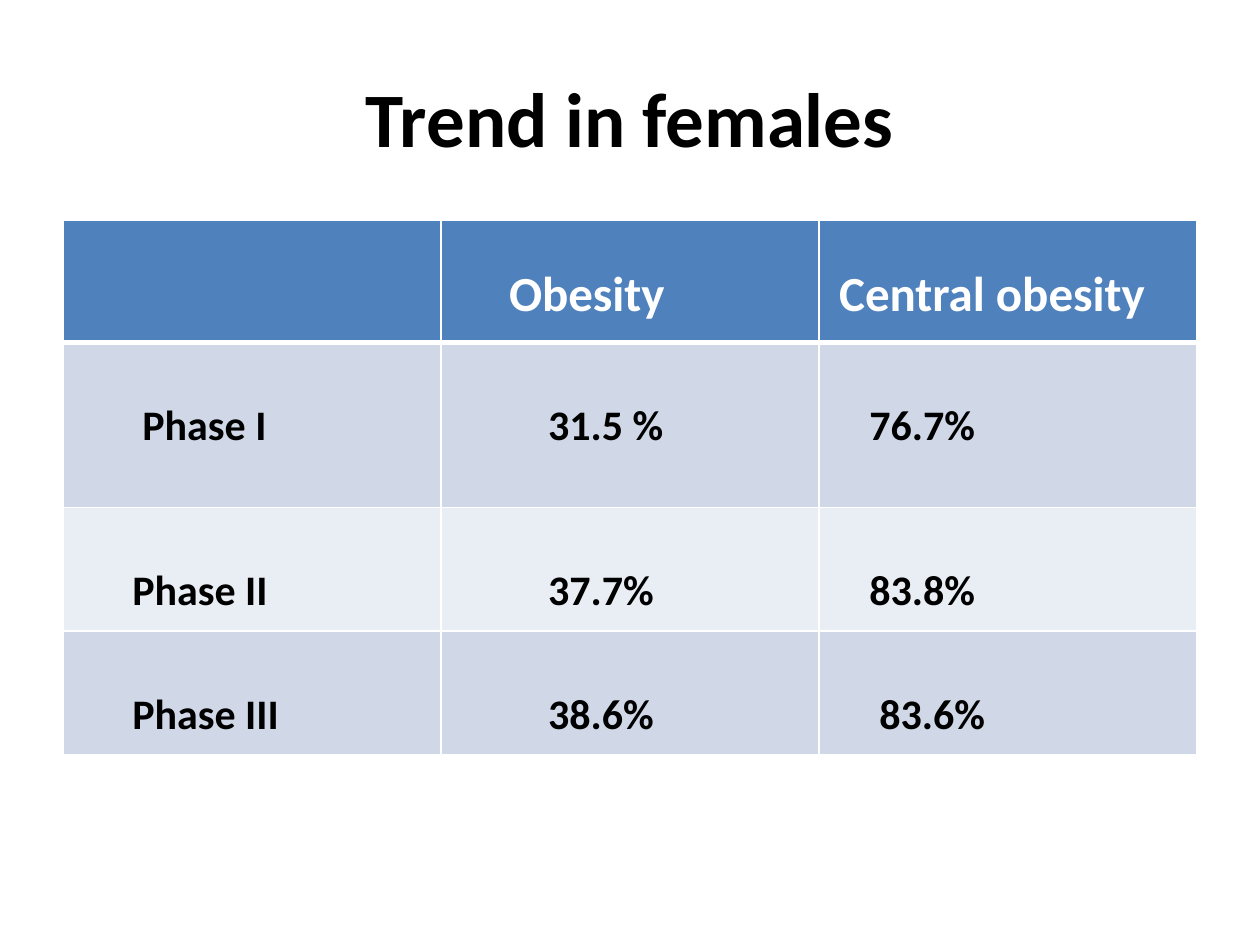
"""Build the slide on the trend in females."""
from lxml import etree
from pptx import Presentation
from pptx import util as u
from pptx.dml.color import RGBColor
from pptx.enum import text
from pptx.oxml import ns

BLACK = RGBColor(0x00, 0x00, 0x00)
WHITE = RGBColor(0xFF, 0xFF, 0xFF)
BLUE = RGBColor(0x4F, 0x81, 0xBD)
BANDS = RGBColor(0xD0, 0xD8, 0xE8), RGBColor(0xE9, 0xED, 0xF4)

HEAD = {"size": 28, "color": WHITE, "top": 0.35}
BODY = {"size": 24, "color": BLACK, "top": 0.46}
HEIGHTS = 0.97, 1.31, 0.98, 0.98
ROWS = [
    [("", 0.1), ("Obesity", 0.54), ("Central obesity", 0.16)],
    [("Phase I", 0.63), ("31.5 %", 0.85), ("76.7%", 0.4)],
    [("Phase II", 0.55), ("37.7%", 0.85), ("83.8%", 0.4)],
    [("Phase III", 0.55), ("38.6%", 0.85), ("83.6%", 0.48)],
]


class Deck:
    """Hold the font and the current slide."""

    def __init__(self, font):
        """Start a deck with one blank slide."""
        self.font = font
        self.file = Presentation()
        self.file.slide_width, self.file.slide_height = u.Inches(10), u.Inches(7.5)
        self.slide = self.file.slides.add_slide(self.file.slide_layouts[6])

    def label(self, para, words, size, color):
        """Add a bold run to a paragraph."""
        run = para.add_run()
        run.text = words
        form = {"name": self.font, "size": u.Pt(size), "bold": True}
        for key, value in form.items():
            setattr(run.font, key, value)
        run.font.color.rgb = color

    def title(self, words, box):
        """Add a centred title."""
        frame = self.slide.shapes.add_textbox(*map(u.Inches, box)).text_frame
        form = {"word_wrap": True, "vertical_anchor": text.MSO_ANCHOR.MIDDLE}
        for key, value in form.items():
            setattr(frame, key, value)
        para = frame.paragraphs[0]
        para.alignment = text.PP_ALIGN.CENTER
        self.label(para, words, 44, BLACK)

    def edge(self, cell, side, width):
        """Draw one white side of a cell."""
        props = cell._tc.get_or_add_tcPr()
        line = etree.SubElement(props, ns.qn(f"a:ln{side}"), w=str(u.Pt(width)))
        fill = etree.SubElement(line, ns.qn("a:solidFill"))
        etree.SubElement(fill, ns.qn("a:srgbClr"), val=str(WHITE))

    def cell(self, cell, words, left, style, fill, sides):
        """Fill, rule and label one cell."""
        form = {"margin_left": u.Inches(left), "margin_top": u.Inches(style["top"])}
        for key, value in form.items():
            setattr(cell, key, value)
        for side, width in sides.items():
            self.edge(cell, side, width)
        cell.fill.solid()
        cell.fill.fore_color.rgb = fill
        if words:
            self.label(cell.text_frame.paragraphs[0], words, style["size"], style["color"])

    def table(self, rows, heights, left, top, width):
        """Add a table with a header and banded rows."""
        box = map(u.Inches, (left, top, width, sum(heights)))
        grid = self.slide.shapes.add_table(len(rows), len(rows[0]), *box).table
        for i, (row, height) in enumerate(zip(rows, heights)):
            grid.rows[i].height = u.Inches(height)
            style, fill = (BODY, BANDS[(i - 1) % 2]) if i else (HEAD, BLUE)
            sides = {"L": 1, "R": 1, "T": 3 if i == 1 else 1, "B": 1 if i else 3}
            for j, (words, inset) in enumerate(row):
                self.cell(grid.cell(i, j), words, inset, style, fill, sides)


def main():
    """Build and save the deck."""
    deck = Deck("Calibri")
    deck.title("Trend in females", (0.5, 0.3, 9, 1.25))
    deck.table(ROWS, HEIGHTS, 0.5, 1.75, 9)
    deck.file.save("out.pptx")


if __name__ == "__main__":
    main()
